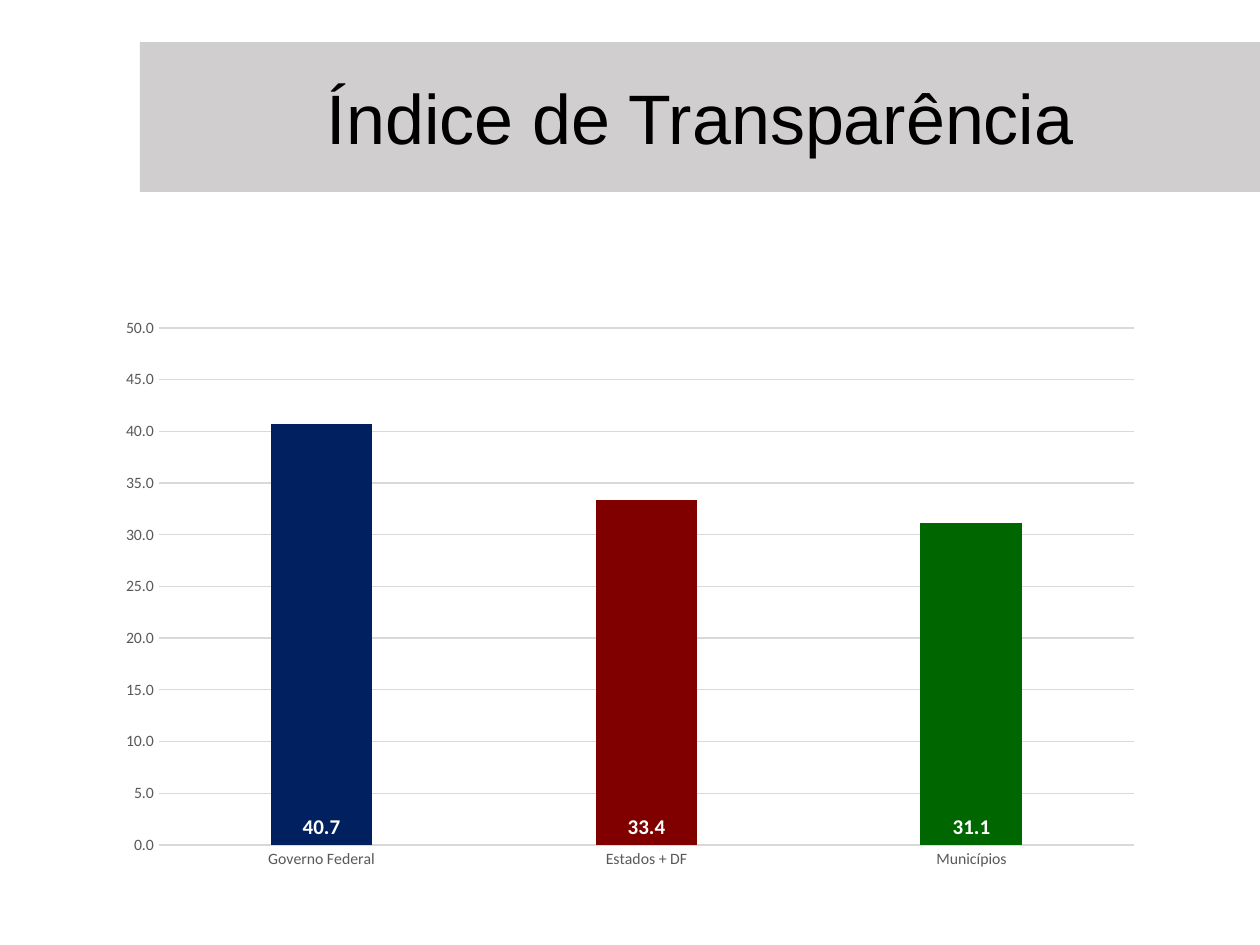
"""Build the slide with the transparency index column chart."""
from pptx import Presentation
from pptx.chart import data as cd
from pptx.dml import color as dc
from pptx.enum import chart as ec, text as et
from pptx.util import Pt

BLACK = dc.RGBColor(0x00, 0x00, 0x00)
WHITE = dc.RGBColor(0xFF, 0xFF, 0xFF)
BAND = dc.RGBColor(0xD0, 0xCE, 0xCE)
GRID = dc.RGBColor(0xD9, 0xD9, 0xD9)
GRAY = dc.RGBColor(0x59, 0x59, 0x59)
LIME = dc.RGBColor(0x00, 0xB0, 0x50)
NAVY = dc.RGBColor(0x00, 0x20, 0x60)
RED = dc.RGBColor(0x80, 0x00, 0x00)
GREEN = dc.RGBColor(0x00, 0x66, 0x00)


def style(font, size, color, name="Calibri", bold=False):
    font.size = Pt(size)
    font.color.rgb = color
    font.name = name
    font.bold = bold


def rule(line):
    line.color.rgb = GRID
    line.width = Pt(0.75)


deck = Presentation()
deck.slide_width, deck.slide_height = Pt(720), Pt(540)
slide = deck.slides.add_slide(deck.slide_layouts[5])

title = slide.shapes.title
title.left, title.top, title.width, title.height = Pt(80), Pt(24), Pt(640), Pt(85.7)
title.fill.solid()
title.fill.fore_color.rgb = BAND
frame = title.text_frame
frame.auto_size = et.MSO_AUTO_SIZE.NONE
frame.word_wrap = True
frame.vertical_anchor = et.MSO_ANCHOR.MIDDLE
para = frame.paragraphs[0]
para.alignment = et.PP_ALIGN.CENTER
run = para.add_run()
run.text = "Índice de Transparência"
style(run.font, 40, BLACK, "Arial")

data = cd.CategoryChartData(number_format="0.0")
data.categories = ["Governo Federal", "Estados + DF", "Municípios"]
data.add_series("Series 1", [40.7, 33.4, 31.1])
chart = slide.shapes.add_chart(
    ec.XL_CHART_TYPE.COLUMN_CLUSTERED, Pt(60), Pt(175.7), Pt(600), Pt(327), data
).chart
chart.has_title = False
chart.has_legend = False
style(chart.font, 10, BLACK)

cat, val = chart.category_axis, chart.value_axis
for axis in (cat, val):
    axis.major_tick_mark = ec.XL_TICK_MARK.NONE
    axis.minor_tick_mark = ec.XL_TICK_MARK.NONE
    style(axis.tick_labels.font, 9, GRAY)
rule(cat.format.line)
val.format.line.fill.background()
val.minimum_scale, val.maximum_scale, val.major_unit = 0, 50, 5
val.has_major_gridlines = True
rule(val.major_gridlines.format.line)
val.tick_labels.number_format = "0.0"
val.tick_labels.number_format_is_linked = False

plot = chart.plots[0]
plot.gap_width, plot.overlap = 219, -27
plot.vary_by_categories = False
bars = plot.series[0]
bars.invert_if_negative = False
bars.format.fill.solid()
bars.format.fill.fore_color.rgb = LIME
for i, color in enumerate((NAVY, RED, GREEN)):
    fill = bars.points[i].format.fill
    fill.solid()
    fill.fore_color.rgb = color

tags = bars.data_labels
tags.show_value = True
tags.position = ec.XL_LABEL_POSITION.INSIDE_BASE
tags.number_format = "0.0"
tags.number_format_is_linked = False
style(tags.font, 12, WHITE, bold=True)

deck.save("out.pptx")
